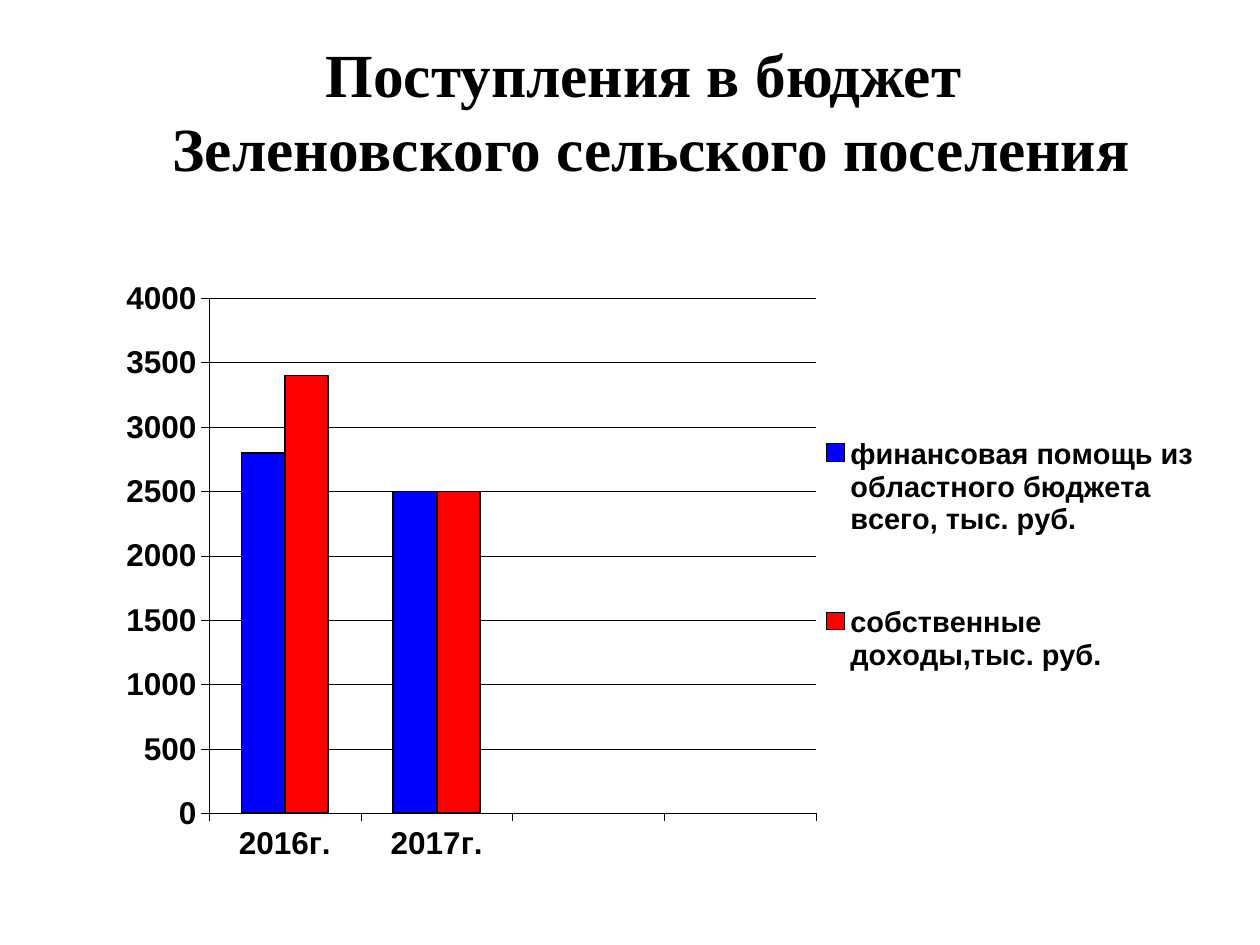
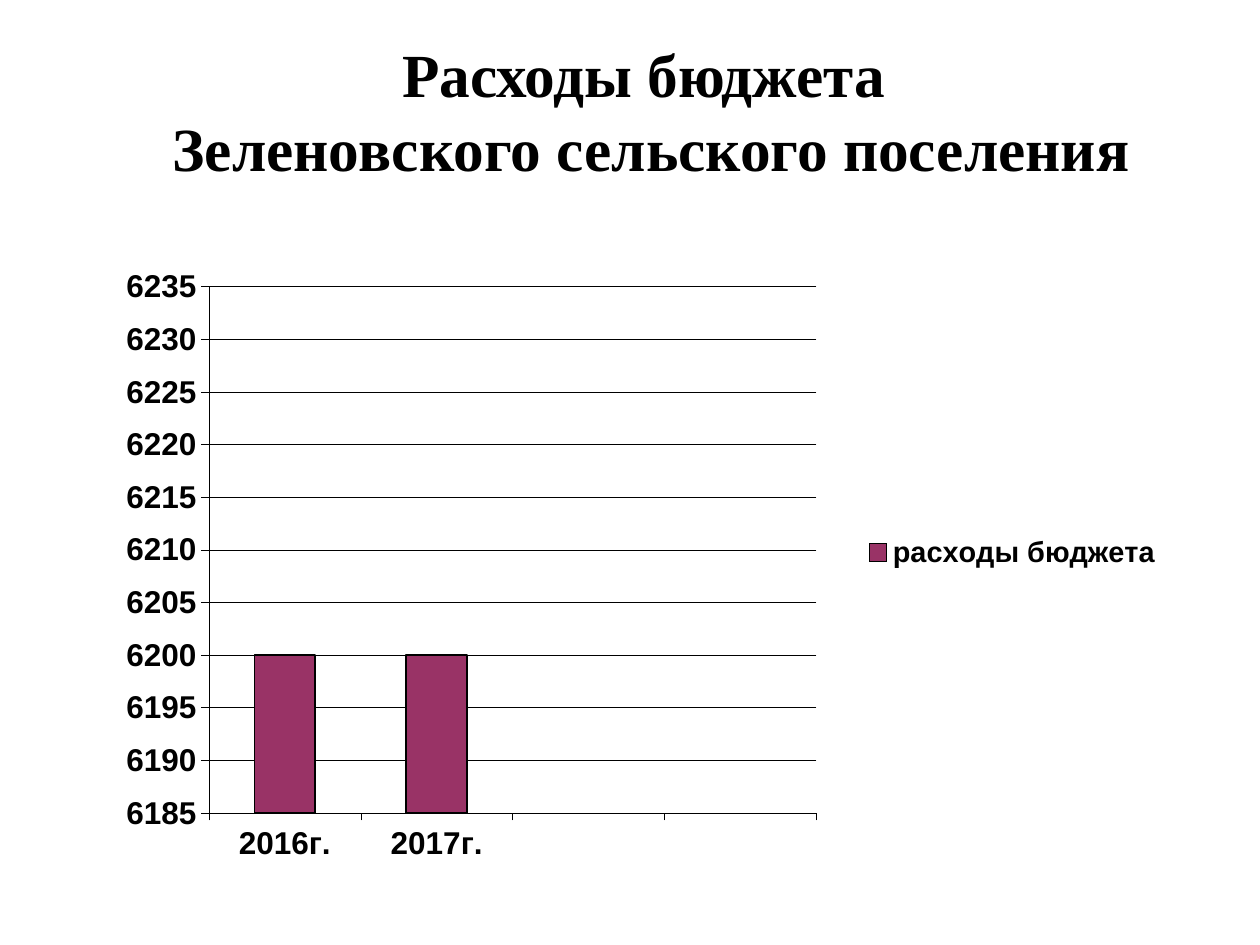
from lxml import etree
from pptx import Presentation
from pptx.chart.data import CategoryChartData
from pptx.dml.color import RGBColor
from pptx.enum.chart import (XL_CHART_TYPE, XL_LEGEND_POSITION, XL_TICK_LABEL_POSITION,
                             XL_TICK_MARK)
from pptx.enum.text import MSO_ANCHOR, MSO_AUTO_SIZE, PP_ALIGN
from pptx.oxml.ns import qn
from pptx.util import Inches, Pt

COLUMNS = XL_CHART_TYPE.COLUMN_CLUSTERED
LEGEND_RIGHT = XL_LEGEND_POSITION.RIGHT
LABELS_LOW = XL_TICK_LABEL_POSITION.LOW
TICK_OUTSIDE, TICK_NONE = XL_TICK_MARK.OUTSIDE, XL_TICK_MARK.NONE
CENTER, MIDDLE, NO_FIT = PP_ALIGN.CENTER, MSO_ANCHOR.MIDDLE, MSO_AUTO_SIZE.NONE

BLACK = RGBColor(0x00, 0x00, 0x00)
BLUE = RGBColor(0x00, 0x00, 0xFF)
RED = RGBColor(0xFF, 0x00, 0x00)
PLUM = RGBColor(0x99, 0x33, 0x66)

TITLE_FONT, CHART_FONT = "Times New Roman", "Arial"
TITLE_ONLY = 5
TITLE_BOX = (0.67, 0.25, 9, 1.25)
SETTLEMENT = "Зеленовского сельского поселения"
YEARS = ("2016г.", "2017г.", "", "")
LEGEND_AREA = (0.66, 0.16, 0.34, 0.6)

SLIDES = (
    dict(heading="Поступления в бюджет ",
         box=(0.58, 2.13, 8.98, 4.95),
         plot_area=(0.12, 0.048, 0.537, 0.826),
         scale=(0, 4000, 500),
         series=(("финансовая помощь из областного бюджета всего, тыс. руб.",
                  (2800, 2500, None, None), BLUE),
                 ("собственные доходы,тыс. руб.", (3400, 2500, None, None), RED))),
    dict(heading="Расходы бюджета ",
         box=(0.58, 2.08, 8.98, 5.01),
         plot_area=(0.12, 0.039, 0.537, 0.834),
         scale=(6185, 6235, 5),
         series=(("расходы бюджета", (6200, 6200, None, None), PLUM),)),
)


def format_font(font, name, size):
    font.name, font.size, font.bold = name, Pt(size), True
    font.color.rgb = BLACK


def format_line(line, width):
    line.color.rgb = BLACK
    line.width = Pt(width)


def set_layout(parent, position, area, inner=False):
    """Place a chart part by fractions of the chart (left, top, width, height)."""
    for old in parent.findall(qn("c:layout")):
        parent.remove(old)
    layout = etree.Element(qn("c:layout"))
    manual = etree.SubElement(layout, qn("c:manualLayout"))
    settings = [("layoutTarget", "inner")] if inner else []
    settings += [("xMode", "edge"), ("yMode", "edge")]
    settings += zip("xywh", map(str, area))
    for tag, value in settings:
        etree.SubElement(manual, qn(f"c:{tag}")).set("val", value)
    parent.insert(position, layout)


def add_title(page, heading):
    title = page.shapes.title
    title.left, title.top, title.width, title.height = map(Inches, TITLE_BOX)
    frame = title.text_frame
    frame.text = f"{heading}\n{SETTLEMENT}"
    frame.word_wrap, frame.auto_size, frame.vertical_anchor = True, NO_FIT, MIDDLE
    for para in frame.paragraphs:
        para.alignment = CENTER
        for span in para.runs:
            format_font(span.font, TITLE_FONT, 35)


def format_axes(chart, scale):
    for axis in (chart.category_axis, chart.value_axis):
        axis.major_tick_mark, axis.minor_tick_mark = TICK_OUTSIDE, TICK_NONE
        format_font(axis.tick_labels.font, CHART_FONT, 18)
        format_line(axis.format.line, 0.25)
    chart.category_axis.tick_label_position = LABELS_LOW
    values = chart.value_axis
    values.minimum_scale, values.maximum_scale, values.major_unit = scale
    values.has_major_gridlines = True
    format_line(values.major_gridlines.format.line, 0.25)


def add_legend(chart):
    chart.has_legend = True
    legend = chart.legend
    legend.position, legend.include_in_layout = LEGEND_RIGHT, False
    format_font(legend.font, CHART_FONT, 16.5)
    set_layout(legend._element, 1, LEGEND_AREA)


def add_budget_chart(page, box, plot_area, scale, series):
    data = CategoryChartData()
    data.categories = YEARS
    for name, amounts, _ in series:
        data.add_series(name, amounts)
    chart = page.shapes.add_chart(COLUMNS, *map(Inches, box), data).chart
    chart.has_title = False
    format_font(chart.font, CHART_FONT, 18)
    plot = chart.plots[0]
    plot.gap_width, plot.overlap, plot.vary_by_categories = 150, 0, False
    for columns, (_, _, color) in zip(plot.series, series):
        columns.format.fill.solid()
        columns.format.fill.fore_color.rgb = color
        columns.invert_if_negative = False
        format_line(columns.format.line, 1)
    format_axes(chart, scale)
    add_legend(chart)
    set_layout(chart._chartSpace.chart.plotArea, 0, plot_area, inner=True)


def add_budget_slide(deck, heading, **chart_format):
    page = deck.slides.add_slide(deck.slide_layouts[TITLE_ONLY])
    add_title(page, heading)
    add_budget_chart(page, **chart_format)


def main():
    deck = Presentation()
    deck.slide_width, deck.slide_height = Inches(10), Inches(7.5)
    for content in SLIDES:
        add_budget_slide(deck, **content)
    deck.save("out.pptx")


if __name__ == "__main__":
    main()
